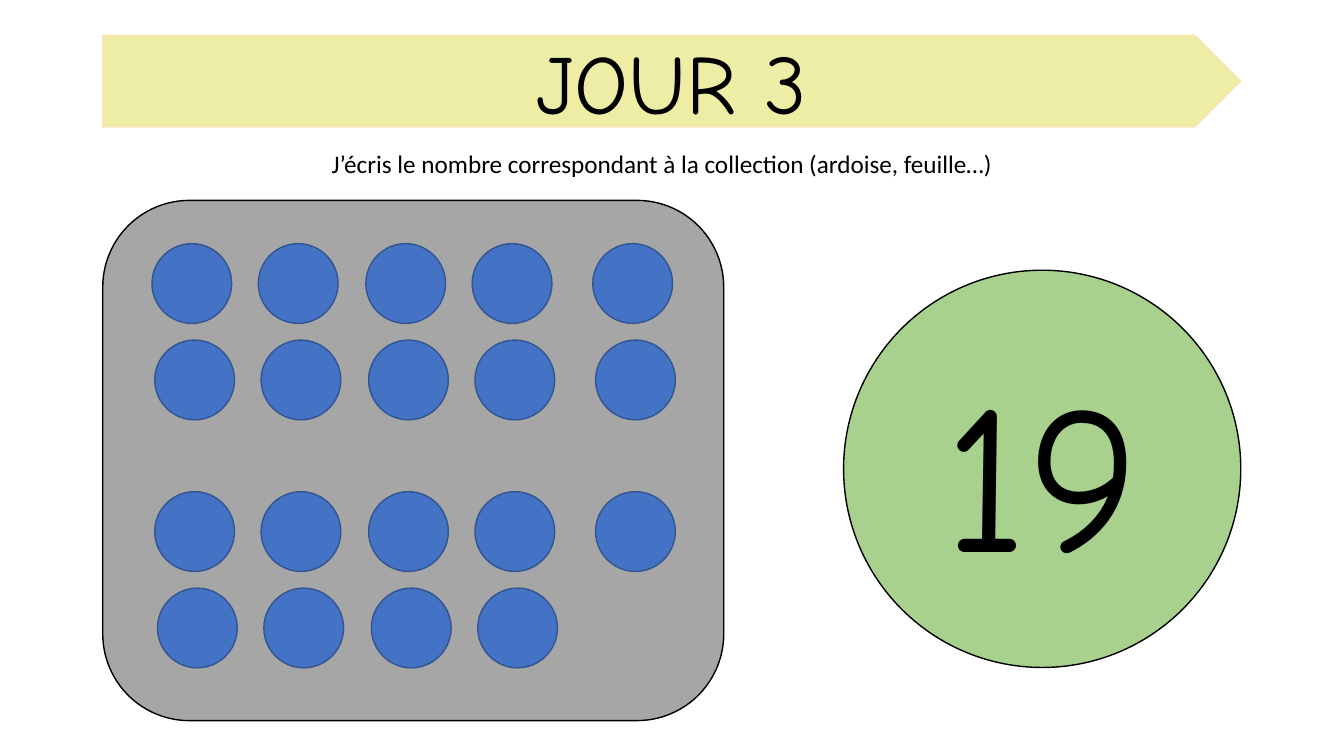
from pptx import Presentation
from pptx.dml.color import RGBColor
from pptx.enum.shapes import MSO_SHAPE
from pptx.enum.text import MSO_ANCHOR, PP_ALIGN
from pptx.util import Cm, Pt

PENTAGON = MSO_SHAPE.PENTAGON
ROUNDED = MSO_SHAPE.ROUNDED_RECTANGLE
OVAL = MSO_SHAPE.OVAL
MIDDLE = MSO_ANCHOR.MIDDLE
CENTER = PP_ALIGN.CENTER

BLACK = RGBColor(0x00, 0x00, 0x00)
YELLOW = RGBColor(0xED, 0xED, 0xA6)
PEACH = RGBColor(0xFD, 0xE0, 0xB8)
GREY = RGBColor(0xA6, 0xA6, 0xA6)
GREEN = RGBColor(0xA9, 0xD1, 0x8E)
BLUE = RGBColor(0x44, 0x72, 0xC4)
DARK_BLUE = RGBColor(0x32, 0x54, 0x91)


def add_filled(shapes, kind, left, top, width, height, fill, line):
    shape = shapes.add_shape(kind, Cm(left), Cm(top), Cm(width), Cm(height))
    shape.shadow.inherit = False
    shape.fill.solid()
    shape.fill.fore_color.rgb = fill
    shape.line.color.rgb = line
    shape.line.width = Pt(1)
    return shape


def write_centered(shape, text, font_name, size):
    frame = shape.text_frame
    frame.word_wrap = True
    frame.text = text
    para = frame.paragraphs[0]
    para.alignment = CENTER
    font = para.runs[0].font
    font.name = font_name
    font.size = Pt(size)
    font.color.rgb = BLACK


deck = Presentation()
deck.slide_width = Cm(33.87)
deck.slide_height = Cm(19.05)
page = deck.slides.add_slide(deck.slide_layouts[6])

# Title banner
banner = page.shapes.add_group_shape()
add_filled(banner.shapes, PENTAGON, 2.59, 0.89, 28.68, 2.31, YELLOW, PEACH)
title = banner.shapes.add_textbox(Cm(7.39), Cm(0.64), Cm(19.08), Cm(2.82))
write_centered(title, "JOUR 3", "Comic Neue", 60)

# Instruction
instruction = page.shapes.add_textbox(Cm(6.78), Cm(3.61), Cm(19.81), Cm(1.02))
write_centered(
    instruction,
    "J’écris le nombre correspondant à la collection (ardoise, feuille…)",
    "Calibri",
    18,
)

# Panel and answer disc
add_filled(page.shapes, ROUNDED, 2.59, 5.05, 15.65, 13.11, GREY, BLACK)
answer = add_filled(page.shapes, OVAL, 21.26, 6.81, 10.01, 10.01, GREEN, BLACK)
answer.text_frame.vertical_anchor = MIDDLE
write_centered(answer, "19", "Comic Neue", 150)

# Counters: each row has a top, a shift to the right and a count
COUNTER_SIZE = 2.01
column_lefts = [3.83, 6.51, 9.22, 11.9, 14.94]
rows = [(6.14, 0, 5), (8.57, 0.07, 5), (12.39, 0.07, 5), (14.82, 0.14, 4)]
for top, shift, count in rows:
    for left in column_lefts[:count]:
        add_filled(page.shapes, OVAL, left + shift, top,
                   COUNTER_SIZE, COUNTER_SIZE, BLUE, DARK_BLUE)

deck.save("out.pptx")
